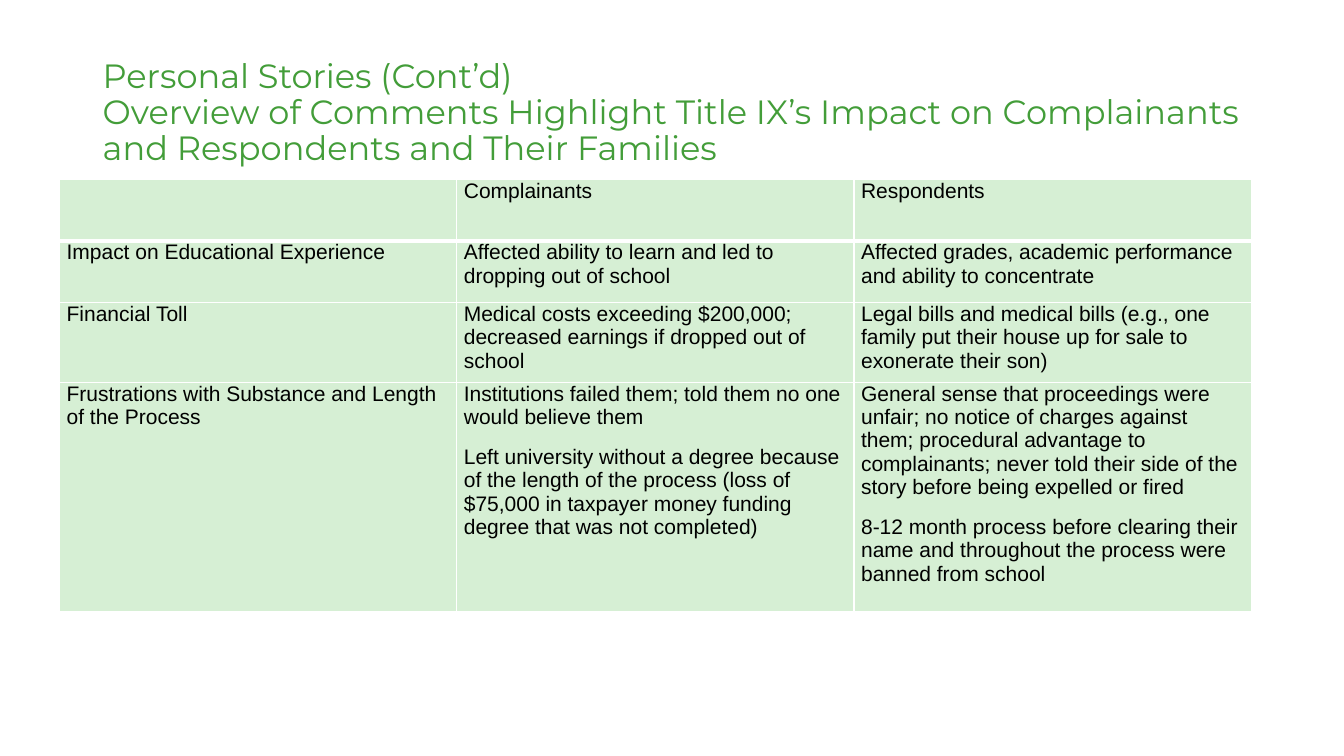
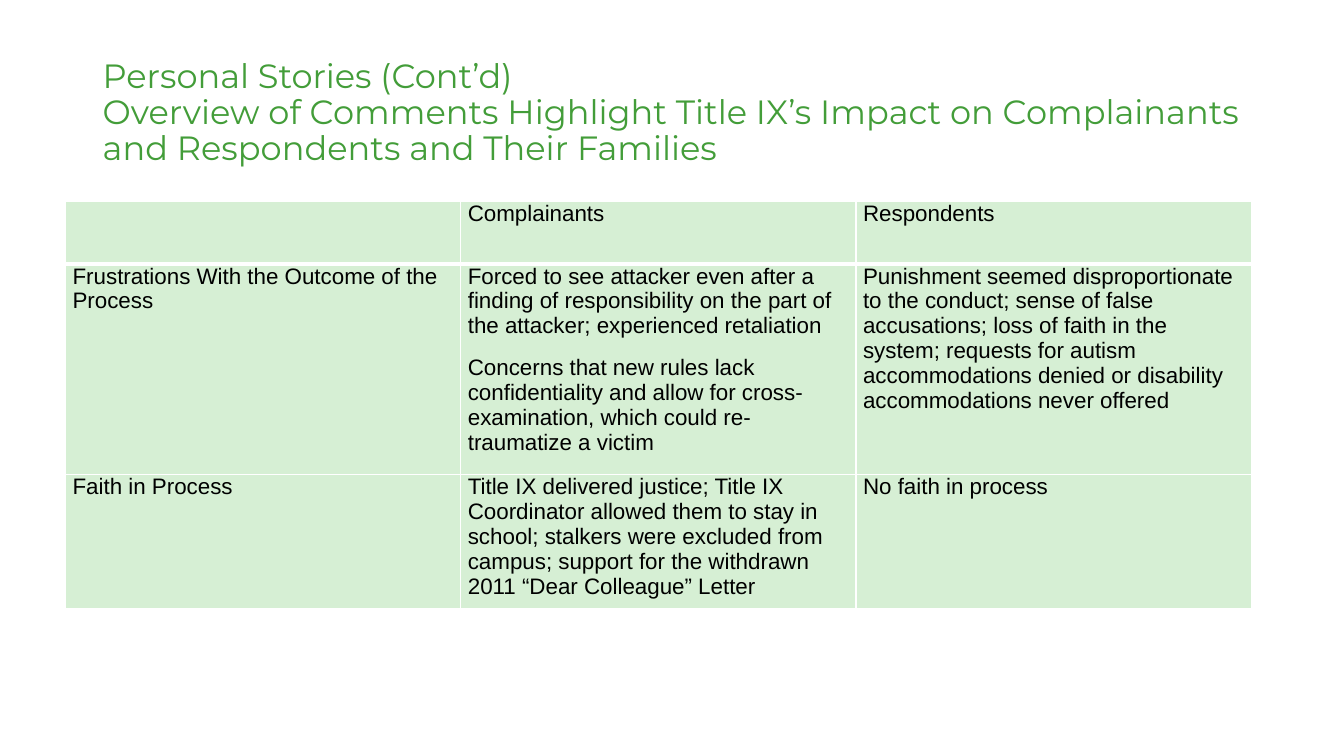
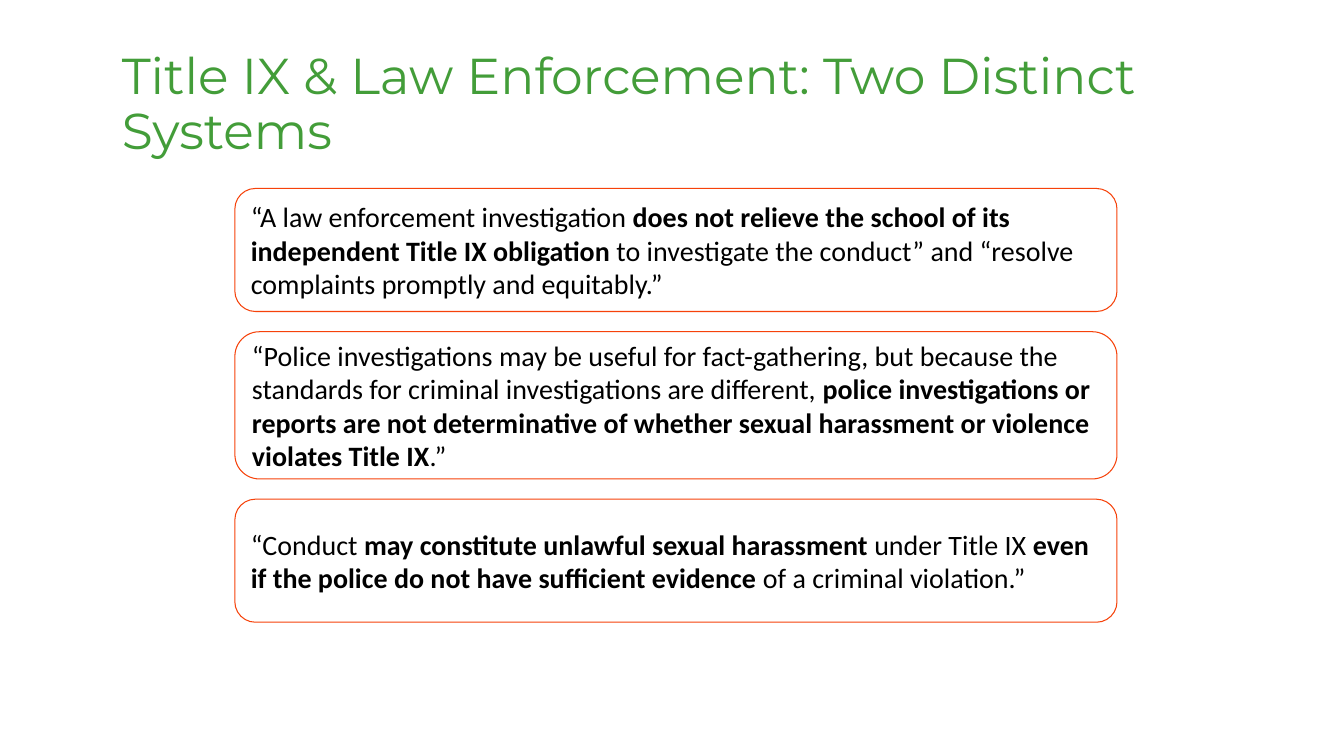
from dataclasses import dataclass
from typing import Any

import pptx
import pptx.dml.color
import pptx.enum.shapes
import pptx.enum.text
import pptx.oxml
import pptx.oxml.ns
import pptx.util
from pptx.dml.color import RGBColor
from pptx.util import Cm, Pt

# Shared look
TITLE_GREEN = RGBColor(0x43, 0x9D, 0x39)
CELL_GREEN = RGBColor(0xD6, 0xEF, 0xD4)
QUOTE_ORANGE = RGBColor(0xF6, 0x42, 0x0A)
BLACK = RGBColor(0, 0, 0)
WHITE = RGBColor(0xFF, 0xFF, 0xFF)
MIDDLE = pptx.enum.text.MSO_ANCHOR.MIDDLE
LEFT = pptx.enum.text.PP_ALIGN.LEFT

TITLE_FONT = {"name": "Montserrat"}
TABLE_FONT = {"name": "Arial"}
QUOTE_FONT = {"name": "Calibri", "size": Pt(20)}
CELL_FORMAT = {
    "margin_left": Cm(0.18),
    "margin_right": Cm(0.18),
    "margin_top": Cm(0),
    "margin_bottom": Cm(0),
}
TABLE_FORMAT = {"first_row": False, "horz_banding": False}

STORIES_TITLE = (
    "Personal Stories (Cont’d)\vOverview of Comments Highlight Title IX’s "
    "Impact on Complainants and Respondents and Their Families"
)
HEADER = ("", "Complainants", "Respondents")


@dataclass(frozen=True)
class Box:
    left: float
    top: float
    width: float
    height: float

    def lengths(self) -> tuple:
        return Cm(self.left), Cm(self.top), Cm(self.width), Cm(self.height)


@dataclass(frozen=True)
class StoryTable:
    left: float
    top: float
    column_width: float
    font_size: int
    row_heights: tuple[float, ...]
    rows: tuple[tuple[str, ...], ...]  # a line break starts a new paragraph


@dataclass(frozen=True)
class Quote:
    height: float
    phrases: tuple[str, ...]  # regular and bold text take turns


STORIES_TITLE_BOX = Box(2.34, 1.02, 29.21, 3.68)
SYSTEMS_TITLE_BOX = Box(2.82, 1.07, 26.9, 3.18)

STORY_TABLES = (
    StoryTable(1.5, 4.52, 10.01, 15, (1.55, 1.55, 2.01, 5.79), (
        HEADER,
        (
            "Impact on Educational Experience",
            "Affected ability to learn and led to dropping out of school",
            "Affected grades, academic performance and ability to concentrate",
        ),
        (
            "Financial Toll",
            "Medical costs exceeding $200,000; decreased earnings if dropped "
            "out of school",
            "Legal bills and medical bills (e.g., one family put their house "
            "up for sale to exonerate their son)",
        ),
        (
            "Frustrations with Substance and Length of the Process",
            "Institutions failed them; told them no one would believe them\n"
            "Left university without a degree because of the length of the "
            "process (loss of $75,000 in taxpayer money funding degree that "
            "was not completed)",
            "General sense that proceedings were unfair; no notice of charges "
            "against them; procedural advantage to complainants; never told "
            "their side of the story before being expelled or fired\n"
            "8-12 month process before clearing their name and throughout the "
            "process were banned from school",
        ),
    )),
    StoryTable(1.65, 5.08, 9.96, 16, (1.57, 5.31, 3.12), (
        HEADER,
        (
            "Frustrations With the Outcome of the Process",
            "Forced to see attacker even after a finding of responsibility on "
            "the part of the attacker; experienced retaliation\n"
            "Concerns that new rules lack confidentiality and allow for "
            "cross-examination, which could re-traumatize a victim",
            "Punishment seemed disproportionate to the conduct; sense of false "
            "accusations; loss of faith in the system; requests for autism "
            "accommodations denied or disability accommodations never offered",
        ),
        (
            "Faith in Process",
            "Title IX delivered justice; Title IX Coordinator allowed them to "
            "stay in school; stalkers were excluded from campus; support for "
            "the withdrawn 2011 “Dear Colleague” Letter",
            "No faith in process",
        ),
    )),
)

QUOTE_LEFT, QUOTE_TOP, QUOTE_WIDTH, QUOTE_GAP = 5.92, 4.75, 22.23, 0.51
QUOTES = (
    Quote(3.1, (
        "“A law enforcement investigation ",
        "does not relieve the school of its independent Title IX obligation",
        " to investigate the conduct” and “resolve complaints promptly and "
        "equitably.”",
    )),
    Quote(3.71, (
        "“Police investigations may be useful for fact-gathering, but because "
        "the standards for criminal investigations are different, ",
        "police investigations or reports are not determinative of whether "
        "sexual harassment or violence violates Title IX",
        ".”",
    )),
    Quote(3.1, (
        "“Conduct ",
        "may constitute unlawful sexual harassment ",
        "under Title IX ",
        "even if the police do not have sufficient evidence",
        " of a criminal violation.”",
    )),
)


def apply_format(target: Any, values: dict[str, Any]) -> None:
    for name, value in values.items():
        setattr(target, name, value)


def format_runs(paragraph: Any, font: dict[str, Any], color: RGBColor) -> None:
    for run in paragraph.runs:
        apply_format(run.font, font)
        run.font.color.rgb = color


def add_slide(presentation: Any, title: str, box: Box, size: int) -> Any:
    """Add a blank slide with the shared title style."""
    slide = presentation.slides.add_slide(presentation.slide_layouts[6])
    frame = slide.shapes.add_textbox(*box.lengths()).text_frame
    apply_format(frame, {"word_wrap": True, "vertical_anchor": MIDDLE})
    paragraph = frame.paragraphs[0]
    paragraph.text = title
    paragraph.line_spacing = 0.9
    format_runs(paragraph, TITLE_FONT | {"size": Pt(size)}, TITLE_GREEN)
    return slide


def add_cell_borders(cell: Any, bottom_points: int) -> None:
    properties = cell._tc.get_or_add_tcPr()
    widths = {"lnL": 1, "lnR": 1, "lnT": 1, "lnB": bottom_points}
    for side, points in widths.items():
        properties.append(pptx.oxml.parse_xml(
            f'<a:{side} {pptx.oxml.ns.nsdecls("a")} w="{Pt(points)}">'
            f'<a:solidFill><a:srgbClr val="{WHITE}"/></a:solidFill></a:{side}>'
        ))


def fill_cell(cell: Any, text: str, size: int, is_header: bool) -> None:
    apply_format(cell, CELL_FORMAT)
    add_cell_borders(cell, 3 if is_header else 1)
    cell.fill.solid()
    cell.fill.fore_color.rgb = CELL_GREEN
    cell.text = text
    for paragraph in cell.text_frame.paragraphs:
        paragraph.space_after = Pt(12)
        format_runs(paragraph, TABLE_FONT | {"size": Pt(size)}, BLACK)


def add_story_table(slide: Any, story: StoryTable) -> None:
    box = Box(story.left, story.top, story.column_width * len(HEADER),
              sum(story.row_heights))
    table = slide.shapes.add_table(
        len(story.rows), len(HEADER), *box.lengths()).table
    apply_format(table, TABLE_FORMAT)
    for column in table.columns:
        column.width = Cm(story.column_width)
    for row_index, texts in enumerate(story.rows):
        table.rows[row_index].height = Cm(story.row_heights[row_index])
        for column_index, text in enumerate(texts):
            fill_cell(table.cell(row_index, column_index), text,
                      story.font_size, row_index == 0)


def add_quote(slide: Any, quote: Quote, top: float) -> None:
    box = Box(QUOTE_LEFT, top, QUOTE_WIDTH, quote.height)
    shape = slide.shapes.add_shape(
        pptx.enum.shapes.MSO_SHAPE.ROUNDED_RECTANGLE, *box.lengths())
    shape.shadow.inherit = False
    shape.fill.solid()
    shape.fill.fore_color.rgb = WHITE
    shape.line.color.rgb = QUOTE_ORANGE
    shape.line.width = Pt(0.75)
    frame = shape.text_frame
    apply_format(frame, {"word_wrap": True, "vertical_anchor": MIDDLE})
    paragraph = frame.paragraphs[0]
    paragraph.alignment = LEFT
    for index, phrase in enumerate(quote.phrases):
        run = paragraph.add_run()
        run.text = phrase
        run.font.bold = index % 2 == 1
    format_runs(paragraph, QUOTE_FONT, BLACK)


def main() -> None:
    presentation = pptx.Presentation()
    apply_format(presentation,
                 {"slide_width": Cm(33.87), "slide_height": Cm(19.05)})

    # Personal stories
    for story in STORY_TABLES:
        slide = add_slide(presentation, STORIES_TITLE, STORIES_TITLE_BOX, 24)
        add_story_table(slide, story)

    # Two distinct systems
    slide = add_slide(
        presentation, "Title IX & Law Enforcement: Two Distinct Systems",
        SYSTEMS_TITLE_BOX, 36)
    top = QUOTE_TOP
    for quote in QUOTES:
        add_quote(slide, quote, top)
        top += quote.height + QUOTE_GAP

    presentation.save("out.pptx")


if __name__ == "__main__":
    main()
